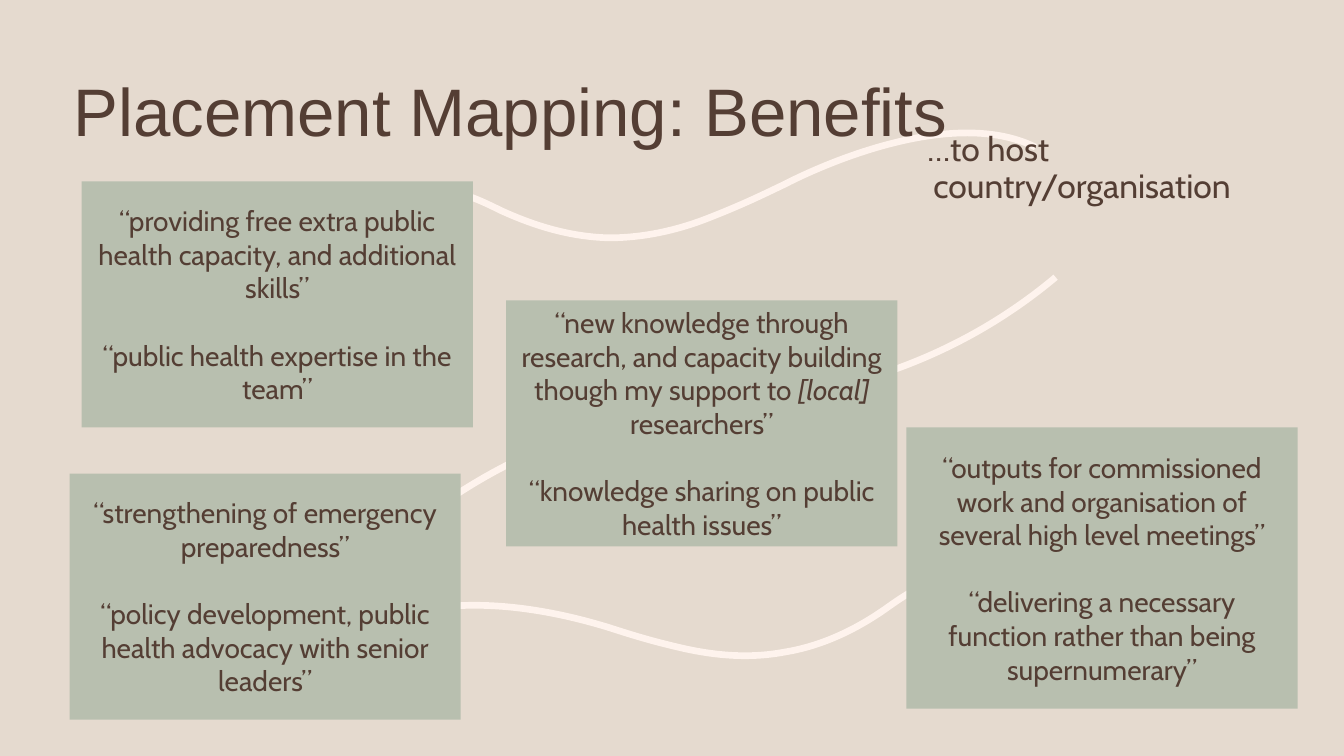
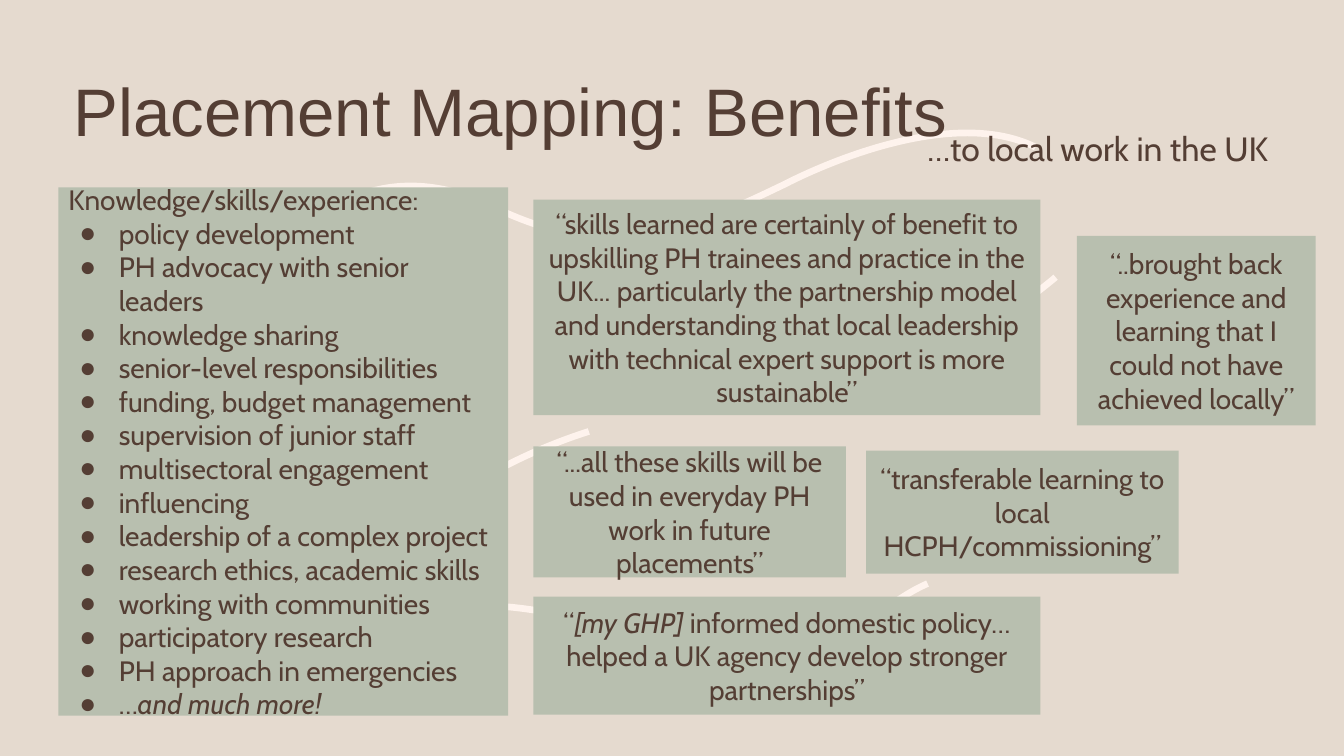
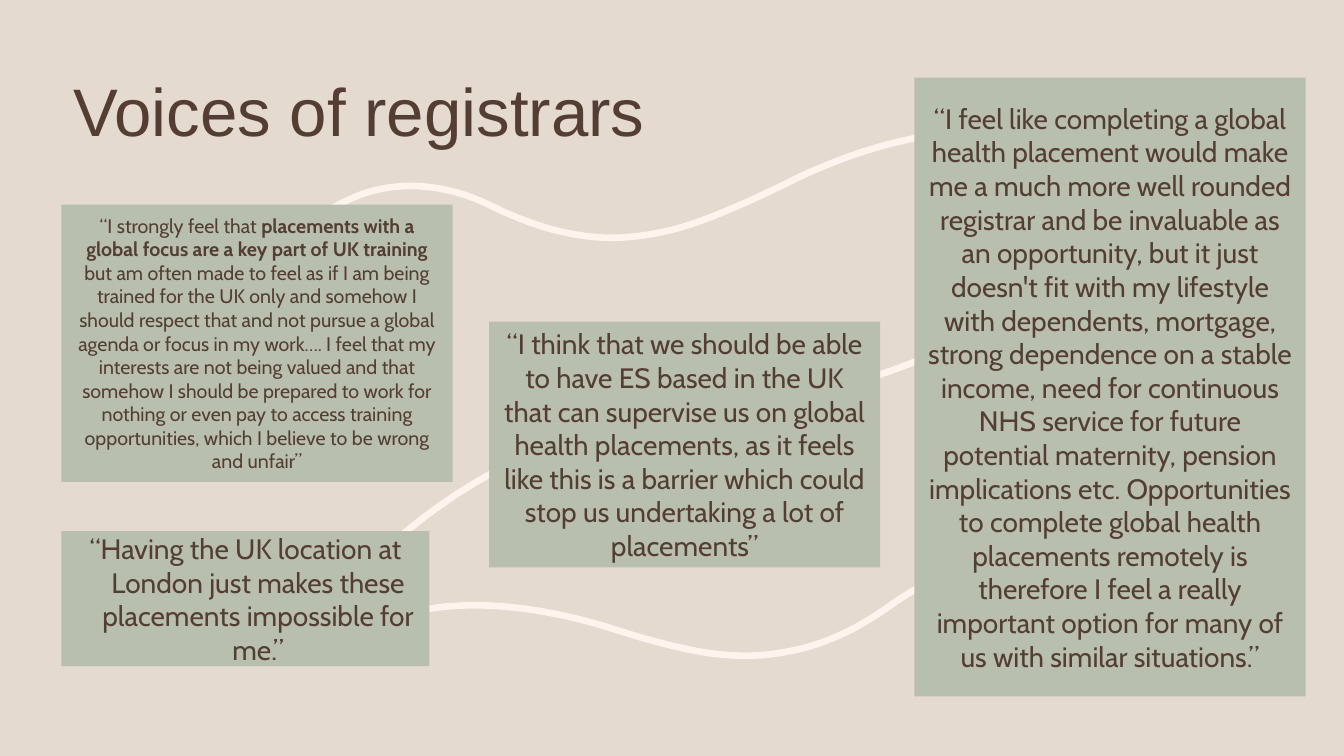
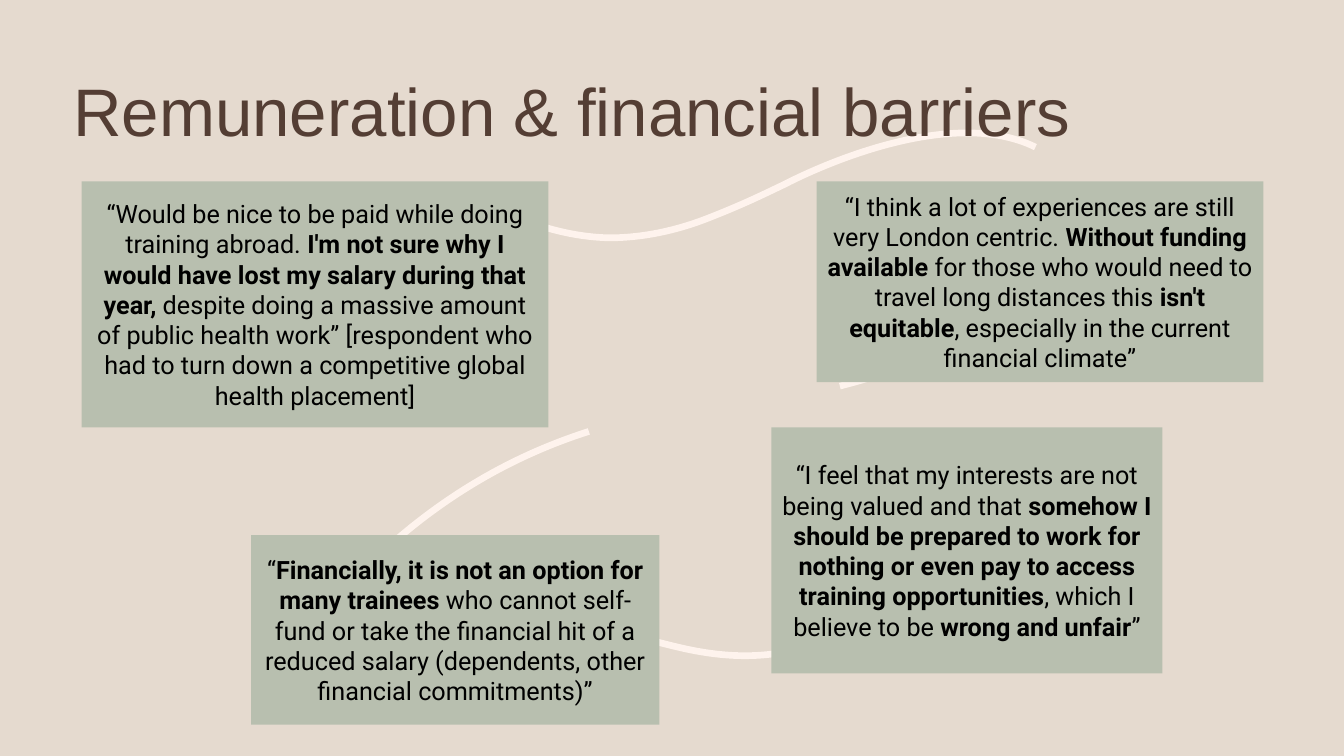
import pptx
import pptx.util
import pptx.dml.color
import pptx.enum.shapes
import pptx.enum.text
import pptx.oxml
import pptx.oxml.ns

Inches = pptx.util.Inches
Pt = pptx.util.Pt
ALIGN = pptx.enum.text.PP_ALIGN
ANCHOR = pptx.enum.text.MSO_ANCHOR

SAND, SAGE, BROWN, CREAM, BLACK = "E5DACF", "B8BFAF", "543E34", "FEF3ED", "000000"
WIDE = 3.88
TALL = 2.44

# Each wave is a start point, then cubic segments of two controls and an end.
WAVES = [
    [(8.33, 3.83), (9.13, 3.63), (9.85, 3.27), (10.47, 2.75)],
    [(5.84, 4.28), (5.09, 4.52), (4.45, 4.9), (3.89, 5.39)],
    [(3.07, 2.23),
     (3.5, 1.87), (3.98, 1.77), (4.49, 1.9),
     (4.66, 1.94), (4.81, 2.01), (4.97, 2.09),
     (5.3, 2.24), (5.65, 2.35), (6.04, 2.36),
     (6.37, 2.36), (6.7, 2.29), (7.01, 2.17),
     (7.37, 2.03), (7.57, 1.93), (7.78, 1.83),
     (8.01, 1.71), (9.4, 1.03), (10.27, 1.46)],
    [(9.2, 5.79),
     (9.04, 5.86), (8.91, 5.95), (8.77, 6.05),
     (8.48, 6.25), (8.15, 6.41), (7.78, 6.47),
     (7.46, 6.53), (7.14, 6.51), (6.81, 6.44),
     (6.45, 6.36), (6.24, 6.29), (6.02, 6.22),
     (5.78, 6.15), (4.34, 5.7), (3.47, 6.36)],
]

SKILLS = [
    "policy development",
    "PH advocacy with senior leaders",
    "knowledge sharing",
    "senior-level responsibilities",
    "funding, budget management",
    "supervision of junior staff",
    "multisectoral engagement",
    "influencing",
    "leadership of a complex project",
    "research ethics, academic skills",
    "working with communities",
    "participatory research",
    "PH approach in emergencies",
    "…|and much more!|",
]


def color(code):
    return pptx.dml.color.RGBColor.from_string(code)


def add_dot(para):
    props = para._p.get_or_add_pPr()
    space = pptx.oxml.ns.nsdecls("a")
    for part in (f'<a:buClr {space}><a:srgbClr val="{BROWN}"/></a:buClr>',
                 f'<a:buFont {space} typeface="Arial"/>',
                 f'<a:buChar {space} char="●"/>'):
        props.append(pptx.oxml.parse_xml(part))


def write(para, text, size=20, font="Cabin", ink=BROWN, bold=False,
          align=ALIGN.LEFT, left=0, hang=0, gap=0, lines=None, dot=False):
    """Fill a paragraph; text between bars is bold, or else italic."""
    para.alignment = align
    para.space_before = Pt(gap)
    if lines:
        para.line_spacing = lines
    props = para._p.get_or_add_pPr()
    props.set("marL", str(Inches(left)))
    props.set("indent", str(Inches(hang)))
    if dot:
        add_dot(para)
    for index, part in enumerate(text.split("|")):
        if not part:
            continue
        run = para.add_run()
        run.text = part
        run.font.size = Pt(size)
        run.font.name = font
        run.font.color.rgb = color(ink)
        if index % 2:
            run.font.bold = bold
            run.font.italic = not bold


def fill_text(shape, texts, anchor=ANCHOR.MIDDLE, gap=0, **style):
    """Write one paragraph for each text."""
    frame = shape.text_frame
    frame.word_wrap = True
    frame.vertical_anchor = anchor
    for index, text in enumerate(texts):
        para = frame.add_paragraph() if index else frame.paragraphs[0]
        write(para, text, gap=gap if index else 0, **style)
    return frame


def add_label(slide, place, text, **style):
    shape = slide.shapes.add_textbox(*map(Inches, place))
    fill_text(shape, [text], lines=0.9, **style)


def add_card(slide, place, *texts, **style):
    """Draw a sage box; its quotes stand one blank line apart."""
    shape = slide.shapes.add_shape(
        pptx.enum.shapes.MSO_SHAPE.RECTANGLE, *map(Inches, place))
    shape.shadow.inherit = False
    shape.fill.solid()
    shape.fill.fore_color.rgb = color(SAGE)
    shape.line.fill.background()
    return fill_text(shape, texts, **{"align": ALIGN.CENTER, "gap": 24, **style})


def bend(shape):
    """Turn each three line segments of an outline into one cubic curve."""
    qn = pptx.oxml.ns.qn
    steps = list(shape._element.iter(qn("a:lnTo")))
    for start in range(0, len(steps), 3):
        curve = pptx.oxml.parse_xml(
            f'<a:cubicBezTo {pptx.oxml.ns.nsdecls("a")}/>')
        steps[start].addprevious(curve)
        for step in steps[start:start + 3]:
            curve.append(step[0])
            step.getparent().remove(step)


def add_wave(slide, wave):
    first, *rest = [(Inches(x), Inches(y)) for x, y in wave]
    pen = slide.shapes.build_freeform(*first)
    pen.add_line_segments(rest, close=False)
    shape = pen.convert_to_shape()
    bend(shape)
    shape.shadow.inherit = False
    shape.fill.background()
    shape.line.color.rgb = color(CREAM)
    shape.line.width = Pt(4.75)


def add_slide(deck, title):
    slide = deck.slides.add_slide(deck.slide_layouts[6])
    for wave in WAVES:
        add_wave(slide, wave)
    add_label(slide, (0.63, 0.77, 11.5, 0.74), title, size=48, font="Arial")
    return slide


def add_aside(slide, text, width):
    add_label(slide, (8.91, 1.27, width, TALL), text, size=24,
              anchor=ANCHOR.TOP, left=0.25, hang=-0.06)


def host_slide(deck):
    slide = add_slide(deck, "Placement Mapping: Benefits")
    add_aside(slide, "…to host country/organisation", 4.37)
    add_card(slide, (0.81, 1.8, WIDE, TALL),
             "“providing free extra public health capacity, and additional skills”",
             "“public health expertise in the team”")
    add_card(slide, (5.02, 2.98, WIDE, TALL),
             "“new knowledge through research, and capacity building though "
             "my support to |[local] |researchers”",
             "“knowledge sharing on public health issues”")
    add_card(slide, (8.99, 4.24, WIDE, 2.79),
             "“outputs for commissioned work and organisation of several "
             "high level meetings”",
             "“delivering a necessary function rather than being supernumerary”")
    add_card(slide, (0.69, 4.7, WIDE, TALL),
             "“strengthening of emergency preparedness”",
             "“policy development, public health advocacy with senior leaders”")


def local_slide(deck):
    slide = add_slide(deck, "Placement Mapping: Benefits")
    add_aside(slide, "…to local work in the UK", 4.15)
    frame = add_card(slide, (0.58, 1.86, 4.46, 5.24),
                     "Knowledge/skills/experience:", align=ALIGN.LEFT)
    for skill in SKILLS:
        write(frame.add_paragraph(), skill, left=0.5, hang=-0.39, dot=True)
    add_card(slide, (5.29, 1.98, 5.03, 2.14),
             "“skills learned are certainly of benefit to upskilling PH trainees "
             "and practice in the UK... particularly the partnership model and "
             "understanding that local leadership with technical expert support "
             "is more sustainable”")
    add_card(slide, (10.68, 2.34, 2.37, 1.88),
             "“..brought back experience and learning that I could not have "
             "achieved locally”")
    add_card(slide, (5.29, 4.43, 3.1, 1.3),
             "“...all these skills will be used in everyday PH work in future "
             "placements”")
    add_card(slide, (8.59, 4.47, 3.1, 1.22),
             "“transferable learning to local HCPH/commissioning”")
    add_card(slide, (5.29, 5.92, 5.03, 1.17),
             "“|[my GHP] |informed domestic policy… helped a UK agency develop "
             "stronger partnerships”")


def voice_slide(deck):
    slide = add_slide(deck, "Voices of registrars")
    add_card(slide, (0.61, 2.03, WIDE, 2.75),
             "“I strongly feel that |placements with a global focus are a key part "
             "of UK training |but am often made to feel as if I am being trained "
             "for the UK only and somehow I should respect that and not pursue a "
             "global agenda or focus in my work…. I feel that my interests are not "
             "being valued and that somehow I should be prepared to work for "
             "nothing or even pay to access training opportunities, which I "
             "believe to be wrong and unfair”", size=14, bold=True)
    add_card(slide, (9.07, 0.77, WIDE, 6.14),
             "“I feel like completing a global health placement would make me a "
             "much more well rounded registrar and be invaluable as an "
             "opportunity, but it just doesn't fit with my lifestyle with "
             "dependents, mortgage, strong dependence on a stable income, need "
             "for continuous NHS service for future potential maternity, pension "
             "implications etc. Opportunities to complete global health "
             "placements remotely is therefore I feel a really important option "
             "for many of us with similar situations.”")
    add_card(slide, (4.85, 3.19, WIDE, TALL),
             "“I think that we should be able to have ES based in the UK that can "
             "supervise us on global health placements, as it feels like this is "
             "a barrier which could stop us undertaking a lot of placements”")
    add_card(slide, (0.61, 5.27, 3.65, 1.34),
             "“Having the UK location at London just makes these placements "
             "impossible for me.”", left=0.25, hang=-0.25)


def money_slide(deck):
    slide = add_slide(deck, "Remuneration & financial barriers")
    style = dict(size=18, font="Roboto", ink=BLACK, bold=True, hang=-0.25)
    add_card(slide, (8.1, 1.8, 4.43, 1.99),
             "“I think a lot of experiences are still very London centric. "
             "|Without funding available |for those who would need to travel long "
             "distances this |isn't equitable|, especially in the current "
             "financial climate”", **style)
    add_card(slide, (0.81, 1.8, 4.63, TALL),
             "“Would be nice to be paid while doing training abroad. |I'm not "
             "sure why I would have lost my salary during that year,| despite "
             "doing a massive amount of public health work” [respondent who had "
             "to turn down a competitive global health placement]", **style)
    add_card(slide, (7.65, 4.24, WIDE, TALL),
             "“I feel that my interests are not being valued and that |somehow I "
             "should be prepared to work for nothing or even pay to access "
             "training opportunities|, which I believe to be |wrong and unfair|”",
             **style)
    add_card(slide, (2.49, 5.31, 4.05, 1.88),
             "“|Financially, it is not an option for many trainees |who cannot "
             "self-fund or take the financial hit of a reduced salary "
             "(dependents, other financial commitments)”", **style)


def main():
    deck = pptx.Presentation()
    deck.slide_width = Inches(13.33)
    deck.slide_height = Inches(7.5)
    back = deck.slide_master.background.fill
    back.solid()
    back.fore_color.rgb = color(SAND)
    for build in (host_slide, local_slide, voice_slide, money_slide):
        build(deck)
    deck.save("out.pptx")


if __name__ == "__main__":
    main()
